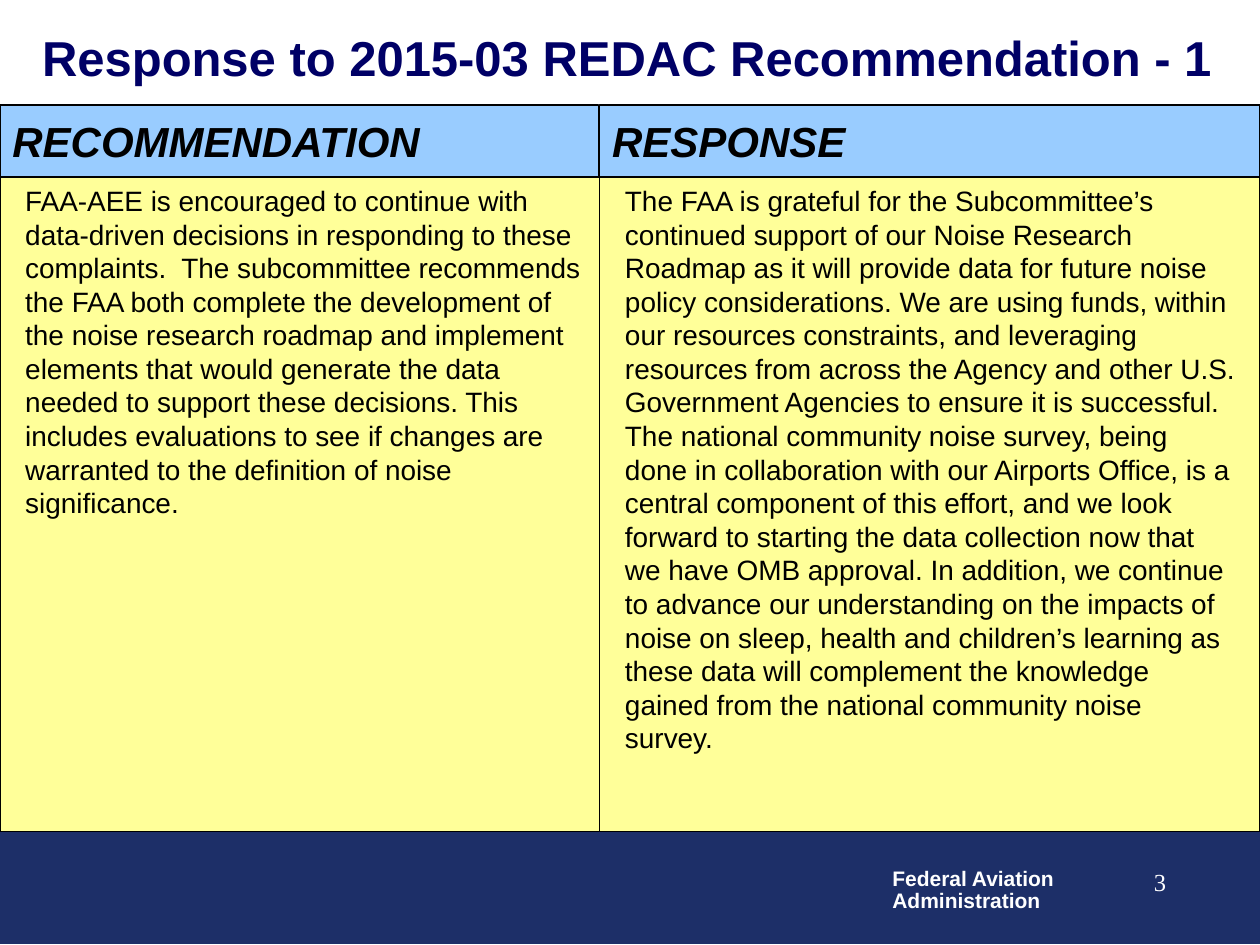
from pptx import Presentation
from pptx.dml.color import RGBColor
from pptx.enum.shapes import MSO_SHAPE as Shape
from pptx.enum.text import MSO_ANCHOR as Anchor, PP_ALIGN as Align
from pptx.util import Cm, Pt

COLORS = {
    "navy": "1D2F68",
    "title": "000066",
    "header": "99CCFF",
    "body": "FFFF99",
    "black": "000000",
    "white": "FFFFFF",
}

RECOMMENDATION = (
    "FAA-AEE is encouraged to continue with data-driven decisions in responding "
    "to these complaints.  The subcommittee recommends the FAA both complete the "
    "development of the noise research roadmap and implement elements that would "
    "generate the data needed to support these decisions. This includes "
    "evaluations to see if changes are warranted to the definition of noise "
    "significance."
)
RESPONSE = (
    "The FAA is grateful for the Subcommittee’s continued support of our Noise "
    "Research Roadmap as it will provide data for future noise policy "
    "considerations. We are using funds, within our resources constraints, and "
    "leveraging resources from across the Agency and other U.S. Government "
    "Agencies to ensure it is successful. The national community noise survey, "
    "being done in collaboration with our Airports Office, is a central component "
    "of this effort, and we look forward to starting the data collection now that "
    "we have OMB approval. In addition, we continue to advance our understanding "
    "on the impacts of noise on sleep, health and children’s learning as these "
    "data will complement the knowledge gained from the national community noise "
    "survey."
)

COLUMN_TOP = 2.12
HEADER_HEIGHT = 1.45
BODY_HEIGHT = 13.2


def color(name):
    return RGBColor.from_string(COLORS[name])


def write(frame, lines, size, ink="black", bold=False, italic=False,
          font="Arial", align=Align.LEFT, anchor=Anchor.TOP, wrap=True,
          left=0.25, right=0.25, spacing=None):
    frame.word_wrap = wrap
    frame.vertical_anchor = anchor
    frame.margin_left, frame.margin_right = Cm(left), Cm(right)
    frame.margin_top = frame.margin_bottom = Cm(0.13)
    for index, line in enumerate(lines):
        paragraph = frame.paragraphs[0] if index == 0 else frame.add_paragraph()
        paragraph.text = line
        paragraph.alignment = align
        paragraph.line_spacing = spacing
        paragraph.font.name = font
        paragraph.font.size = Pt(size)
        paragraph.font.bold = bold
        paragraph.font.italic = italic
        paragraph.font.color.rgb = color(ink)


def add_panel(slide, left, top, width, height, fill, edge="black"):
    panel = slide.shapes.add_shape(
        Shape.RECTANGLE, Cm(left), Cm(top), Cm(width), Cm(height))
    panel.shadow.inherit = False
    panel.fill.solid()
    panel.fill.fore_color.rgb = color(fill)
    panel.line.color.rgb = color(edge)
    panel.line.width = Pt(0.75)
    return panel.text_frame


def add_label(slide, left, top, width, height, lines, size, **style):
    label = slide.shapes.add_textbox(Cm(left), Cm(top), Cm(width), Cm(height))
    write(label.text_frame, lines, size, **style)


def add_column(slide, left, header_width, body_width, heading, text):
    body = add_panel(slide, left, COLUMN_TOP + HEADER_HEIGHT, body_width,
                     BODY_HEIGHT, "body")
    write(body, [text], 16, left=0.51, right=0.45)
    header = add_panel(slide, left, COLUMN_TOP, header_width, HEADER_HEIGHT, "header")
    write(header, [heading], 24, bold=True, italic=True, anchor=Anchor.MIDDLE, wrap=False)


def add_footer(slide):
    add_panel(slide, 0, 16.76, 25.4, 2.26, "navy", edge="navy")
    add_label(slide, 17.74, 17.4, 3.81, 1.12, ["Federal Aviation", "Administration"],
              12, ink="white", bold=True, wrap=False, spacing=0.85)


def main():
    deck = Presentation()
    deck.slide_width, deck.slide_height = Cm(25.4), Cm(1905) // 100
    slide = deck.slides.add_slide(deck.slide_layouts[6])

    add_footer(slide)
    add_column(slide, 0, 12.07, 12.5, "RECOMMENDATION", RECOMMENDATION)
    add_column(slide, 12.09, 13.31, 13.31, "RESPONSE", RESPONSE)
    add_label(slide, 0.6, 0.3, 24.49, 1.7,
              ["Response to 2015-03 REDAC Recommendation - 1"],
              28, ink="title", bold=True, anchor=Anchor.MIDDLE)
    add_label(slide, 18.48, 17.35, 5.28, 1.27, ["3"], 14, ink="white",
              font="Times New Roman", align=Align.RIGHT)

    deck.save("out.pptx")


if __name__ == "__main__":
    main()
